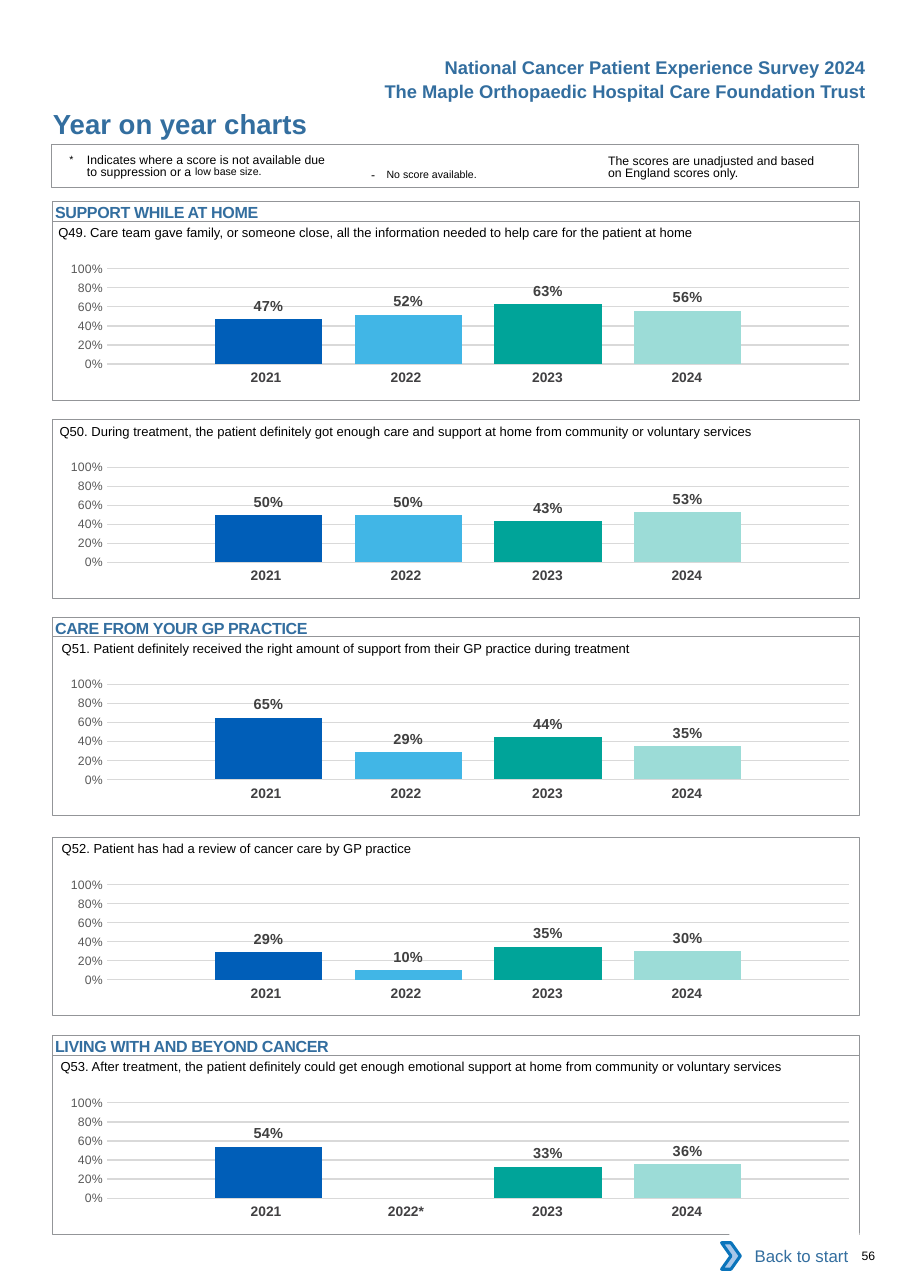
from pptx import Presentation
from pptx.chart.data import CategoryChartData
from pptx.dml.color import RGBColor
from pptx.enum.chart import XL_CHART_TYPE, XL_LABEL_POSITION, XL_TICK_MARK
from pptx.enum.shapes import MSO_SHAPE
from pptx.enum.text import MSO_ANCHOR, PP_ALIGN
from pptx.oxml import parse_xml
from pptx.oxml.ns import nsdecls, qn
from pptx.util import Inches, Pt

LEFT, MID, RIGHT = PP_ALIGN.LEFT, PP_ALIGN.CENTER, PP_ALIGN.RIGHT
TOP, CENTER = MSO_ANCHOR.TOP, MSO_ANCHOR.MIDDLE
RECT, CHEVRON = MSO_SHAPE.RECTANGLE, MSO_SHAPE.CHEVRON
COLUMN = XL_CHART_TYPE.COLUMN_CLUSTERED
OUTSIDE, NO_TICK = XL_LABEL_POSITION.OUTSIDE_END, XL_TICK_MARK.NONE
NO_GRID = "{2D5ABB26-0587-4C30-8999-92F81FD0307C}"

THEME = {
    "font": "Arial",
    "chart font": "Calibri",
    "blue": "336E9F", "black": "000000", "white": "FFFFFF",
    "edge": "939598", "grid": "D9D9D9",
    "arrow": "A8C7E9", "arrow edge": "0A74BB",
    "axis": "595959", "label": "404040", "year": "414042",
    "bars": ("005EB8", "41B6E6", "00A499", "9CDCD7"),
    "title size": 18, "head size": 12, "section size": 10.5,
    "link size": 11, "ask size": 8.5, "note size": 8, "raised size": 12,
    "chart size": 10, "label size": 9.5, "year size": 9, "axis size": 8,
}

YEARS = ("2021", "2022", "2023", "2024")
WIDE, TALL, EDGE = 7.32, 1.62, 0.48

# panel top, question left, section, question, scores
PANELS = [
    (2.01, 0.53, "SUPPORT WHILE AT HOME",
     "Q49. Care team gave family, or someone close, all the information "
     "needed to help care for the patient at home",
     (0.47, 0.52, 0.63, 0.56)),
    (3.81, 0.54, None,
     "Q50. During treatment, the patient definitely got enough care and "
     "support at home from community or voluntary services",
     (0.5, 0.5, 0.43, 0.53)),
    (5.78, 0.56, "CARE FROM YOUR GP PRACTICE",
     "Q51. Patient definitely received the right amount of support from "
     "their GP practice during treatment",
     (0.65, 0.29, 0.44, 0.35)),
    (7.6, 0.56, None,
     "Q52. Patient has had a review of cancer care by GP practice",
     (0.29, 0.1, 0.35, 0.3)),
    (9.58, 0.55, "LIVING WITH AND BEYOND CANCER",
     "Q53. After treatment, the patient definitely could get enough "
     "emotional support at home from community or voluntary services",
     (0.54, None, 0.33, 0.36)),
]


def put(item, **form):
    for name, value in form.items():
        setattr(item, name, value)


def rgb(name):
    return RGBColor.from_string(THEME.get(name, name))


class Page:
    def __init__(self, slide, theme):
        self.slide, self.theme = slide, theme
        self.shapes = slide.shapes

    def style(self, font, size, color, bold=False, face="font"):
        put(font, name=self.theme[face], size=Pt(self.theme[size]), bold=bold)
        font.color.rgb = rgb(color)

    def letter(self, shape, runs, size, color, bold=False, align=LEFT,
               anchor=TOP, pad=(0, 0, 0, 0), lead=None):
        """Fill a shape with one paragraph; a run is (text, size, extras)."""
        frame = shape.text_frame
        put(frame, word_wrap=True, vertical_anchor=anchor)
        sides = ("margin_left", "margin_top", "margin_right", "margin_bottom")
        put(frame, **{side: Inches(gap) for side, gap in zip(sides, pad)})
        if isinstance(runs, str):
            runs = [(runs, size, {})]
        par = frame.paragraphs[0]
        put(par, alignment=align, line_spacing=lead and Pt(lead))
        for text, points, extras in runs:
            run = par.add_run()
            run.text = text
            self.style(run.font, points, color, bold)
            for key, value in extras.items():
                run.font._element.set(key, value)
        return par

    def title(self, text, box):
        shape = self.shapes.title
        put(shape, **dict(zip(("left", "top", "width", "height"),
                              map(Inches, box))))
        self.letter(shape, text, "title size", "blue", bold=True)

    def text(self, box, runs, size, color, **form):
        shape = self.shapes.add_textbox(*map(Inches, box))
        return self.letter(shape, runs, size, color, **form)

    def box(self, box, kind=RECT, fill=None, line=None, width=0.5):
        shape = self.shapes.add_shape(kind, *map(Inches, box))
        shape.shadow.inherit = False
        if fill:
            shape.fill.solid()
            shape.fill.fore_color.rgb = rgb(fill)
        else:
            shape.fill.background()
        if line:
            shape.line.color.rgb = rgb(line)
            shape.line.width = Pt(width)
        else:
            shape.line.fill.background()
        return shape

    def years(self, top, names):
        frame = self.shapes.add_table(
            1, len(names), *map(Inches, (1.73, top, 5.15, 0.27)))
        table = frame.table
        put(table, first_row=False, horz_banding=False)
        next(frame.element.iter(qn("a:tableStyleId"))).text = NO_GRID
        rules = zip(names, (1.27, 1.27, 1.34, 1.27), (0, 0, 0.04, 0.12))
        table.rows[0].height = Inches(0.27)
        for col, (name, width, gap) in enumerate(rules):
            table.columns[col].width = Inches(width)
            cell = table.cell(0, col)
            cell.fill.background()
            put(cell, margin_left=Inches(0.1), margin_right=Inches(gap),
                margin_top=Inches(0.05), margin_bottom=Inches(0.05))
            par = cell.text_frame.paragraphs[0]
            par.alignment = MID
            run = par.add_run()
            run.text = name
            self.style(run.font, "year size", "year", True)

    def chart(self, top, scores):
        data = CategoryChartData(number_format="0%")
        data.categories = ["1"]
        for num, score in enumerate(scores, 1):
            data.add_series(f"Series {num}", [score])
        chart = self.shapes.add_chart(
            COLUMN, *map(Inches, (0.39, top, WIDE, 1.29)), data).chart
        put(chart, has_legend=False, has_title=False)
        self.style(chart.font, "chart size", "black", face="chart font")
        chart.category_axis.visible = False
        axis = chart.value_axis
        put(axis, minimum_scale=0, maximum_scale=1, major_unit=0.2,
            major_tick_mark=NO_TICK, minor_tick_mark=NO_TICK)
        put(axis.tick_labels, number_format="0%",
            number_format_is_linked=False)
        self.style(axis.tick_labels.font, "axis size", "axis")
        axis.format.line.fill.background()
        grid = axis.major_gridlines.format.line
        grid.color.rgb = rgb("grid")
        grid.width = Pt(0.75)
        plot = chart.plots[0]
        put(plot, gap_width=200, overlap=-30, vary_by_categories=False)
        for row, color in zip(plot.series, self.theme["bars"]):
            row.format.fill.solid()
            row.format.fill.fore_color.rgb = rgb(color)
            put(row.data_labels, show_value=True, position=OUTSIDE,
                number_format="0%", number_format_is_linked=False)
            self.style(row.data_labels.font, "label size", "label", True)
        self.place(chart, x=0.08, y=0.145, w=0.915, h=0.666)

    def place(self, chart, **area):
        """Pin the inner plot area, in shares of the chart frame."""
        plot = next(chart.element.iter(qn("c:plotArea"))) if hasattr(
            chart, "element") else next(
            chart._chartSpace.iter(qn("c:plotArea")))
        for old in plot.findall(qn("c:layout")):
            plot.remove(old)
        modes = "".join(f'<c:{k}Mode val="edge"/>' for k in "xy")
        sizes = "".join(f'<c:{k} val="{v:.2f}"/>' for k, v in area.items())
        plot.insert(0, parse_xml(
            f'<c:layout {nsdecls("c")}><c:manualLayout>'
            f'<c:layoutTarget val="inner"/>{modes}{sizes}'
            "</c:manualLayout></c:layout>"))


def main():
    deck = Presentation()
    put(deck, slide_width=Inches(8.26), slide_height=Inches(11.69))
    page = Page(deck.slides.add_slide(deck.slide_layouts[5]), THEME)

    heads = ("National Cancer Patient Experience Survey 2024",
             "The Maple Orthopaedic Hospital Care Foundation Trust")
    for top, head in zip((0.46, 0.68), heads):
        page.text((2.96, top, 5, 0.3), head, "head size", "blue", bold=True,
                  align=RIGHT, pad=(0.1, 0.05, 0.1, 0.05))
    page.title("Year on year charts", (0.48, 0.97, 4.5, 0.3))

    page.box((0.47, 1.31, WIDE, 0.39), line="edge", width=0.75)
    star = page.text((0.63, 1.38, 2.4, 0.27), [
        ("*\t", "raised size", {"baseline": "3000"}),
        ("Indicates where a score is not available due to suppression or a ",
         "note size", {}),
        ("low base size.", "raised size", {"baseline": "7000"}),
    ], "note size", "black", pad=(0, 0.03, 0, 0), lead=8.1)
    for key, gap in (("marL", 0.16), ("indent", -0.16)):
        star._p.get_or_add_pPr().set(key, str(Inches(gap)))
    page.text((3.27, 1.41, 1.83, 0.24), [
        ("- ", "note size", {"spc": "260"}),
        ("No score available.", "raised size", {"baseline": "3000"}),
    ], "note size", "black", pad=(0.1, 0.05, 0.1, 0.05))
    page.text((5.52, 1.38, 1.95, 0.27),
              "The scores are unadjusted and based on England scores only.",
              "note size", "black", pad=(0, 0.03, 0, 0), lead=8.1)

    for top, left, section, ask, scores in PANELS:
        page.box((EDGE, top, WIDE, TALL), line="edge")
        if section:
            bar = page.box((EDGE, top - 0.18, WIDE, 0.18), line="edge")
            page.letter(bar, [(section, "section size", {"spc": "-20"})],
                        "section size", "blue", bold=True,
                        pad=(0.02, 0.01, 0, 0))
        page.text((left, top - 0.06, 7.21, 0.24), ask, "ask size", "black",
                  pad=(0, 0.09, 0, 0))
        page.chart(top + 0.25, scores)
        page.years(top + 1.3, [year + "*" * (score is None)
                               for year, score in zip(YEARS, scores)])

    link = page.box((6.62, 11.19, 1.18, 0.42), fill="white")
    page.letter(link, "Back to start", "link size", "blue", align=RIGHT,
                anchor=CENTER, pad=(0.1, 0.05, 0.1, 0.05))
    page.box((6.55, 11.28, 0.17, 0.24), CHEVRON, "arrow", "arrow edge", 2)
    page.text((7.82, 11.33, 0.4, 0.13), "56", "note size", "black")
    deck.save("out.pptx")


if __name__ == "__main__":
    main()
